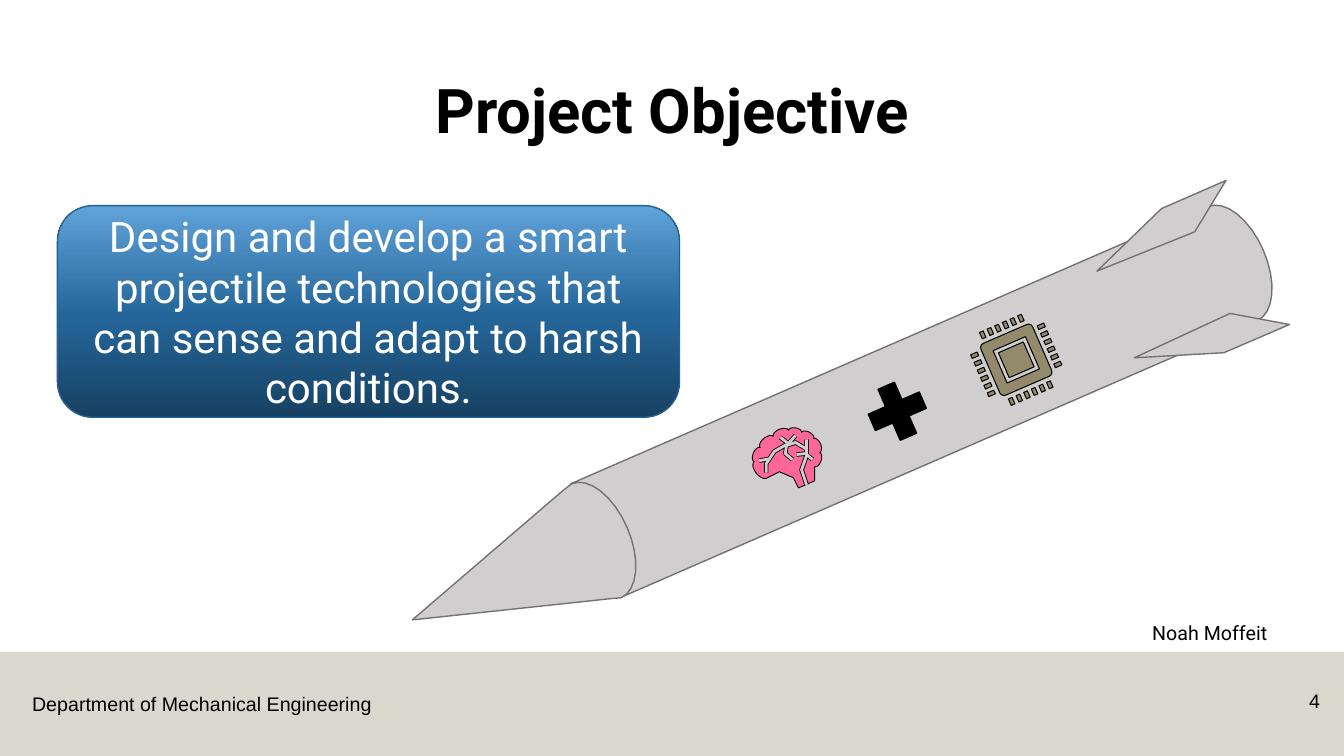
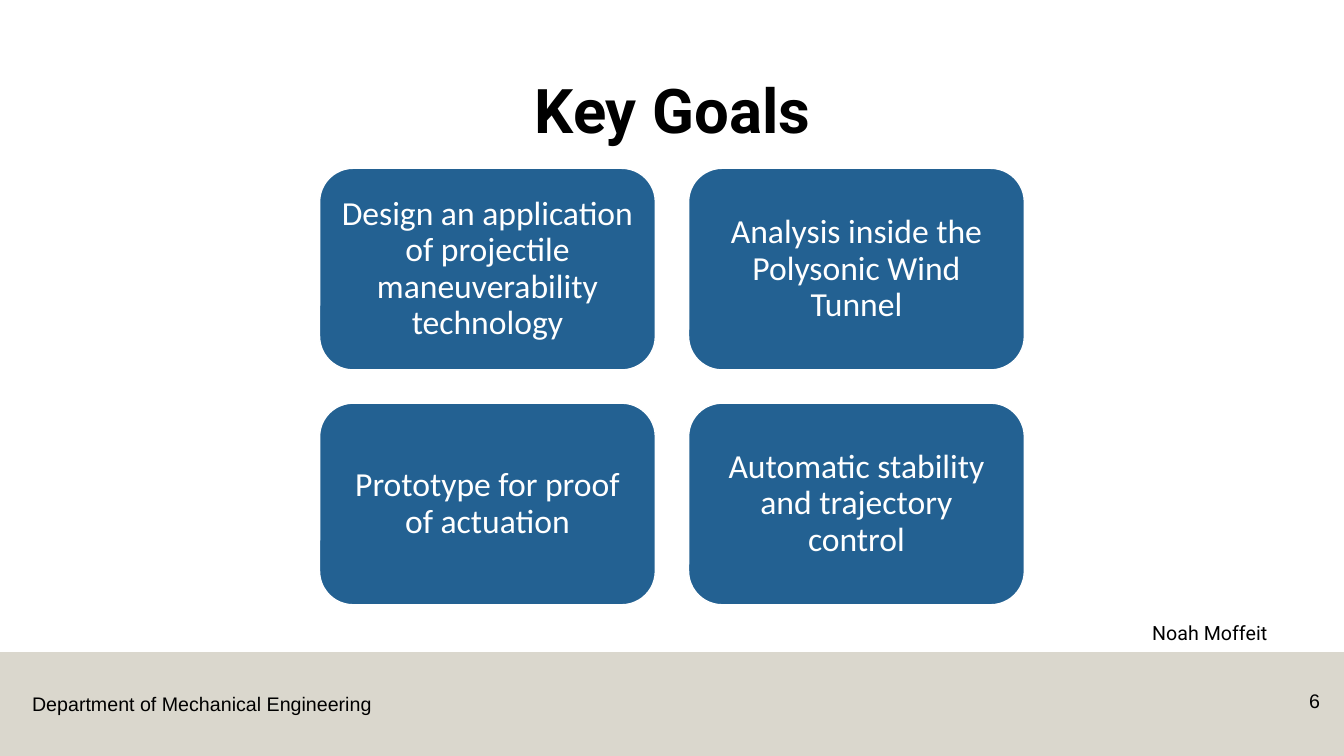
from copy import deepcopy
from math import cos, pi, radians, sin

from lxml import etree
from pptx import Presentation
from pptx.dml.color import RGBColor
from pptx.enum.shapes import MSO_SHAPE as SHAPE
from pptx.enum.text import MSO_ANCHOR as ANCHOR, MSO_AUTO_SIZE as AUTO_SIZE, PP_ALIGN as ALIGN
from pptx.oxml.ns import qn
from pptx.util import Pt

PX = 9144
WIDTH, HEIGHT = 1333, 750
TILT = -23.5
CURVE = 0.27

BLACK = RGBColor.from_string("000000")
WHITE = RGBColor.from_string("FFFFFF")
SAND = RGBColor.from_string("B7B09C")
BLUE = RGBColor.from_string("236192")
DEEP_BLUE = RGBColor.from_string("174162")
MID_BLUE = RGBColor.from_string("25669A")
LIGHT_BLUE = RGBColor.from_string("60A3D9")
HULL = RGBColor.from_string("D0CECE")
HULL_EDGE = RGBColor.from_string("767171")
PINK = RGBColor.from_string("FF6699")
KHAKI = RGBColor.from_string("93896B")

GRADIENT = ((0, DEEP_BLUE), (0.48, MID_BLUE), (1, LIGHT_BLUE))
TITLE_FONT = "Roboto"
FOOTER_FONT = "Arial"
GOAL_FONT = "Calibri"

BODY = [(1198, 205), (1247, 318, CURVE), (615, 593), (566, 480)]
NOSE = [(567, 480), (616, 593, CURVE), (605, 594), (409, 615), (558, 487)]
UPPER_FIN = [(1088, 269), (1152, 207), (1216, 179), (1185, 230)]
LOWER_FIN = [(1125, 355), (1214, 350), (1279, 322), (1220, 311)]
LOBES = [(754, 444), (767, 433), (782, 427), (795, 429), (807, 435), (813, 449), (808, 463)]
STEM = [(808, 477), (792, 484), (787, 474), (773, 468), (761, 474)]
BRAIN = [(748, 458), *[(x, y, CURVE) for x, y in LOBES], *STEM, (748, 458, CURVE)]
GROOVES = (
    [(800, 481), (795, 466), (800, 452), (800, 436)],
    [(799, 445), (789, 439), (780, 442), (779, 450), (786, 456)],
    [(780, 441), (768, 448), (760, 460), (760, 469)],
    [(774, 434), (782, 440), (789, 432)],
    [(753, 457), (764, 455)],
    [(790, 451), (799, 450), (806, 456)],
)

GOALS = (
    "Design an application of projectile maneuverability technology",
    "Analysis inside the Polysonic Wind Tunnel",
    "Prototype for proof of actuation",
    "Automatic stability and trajectory control",
)


def emu(*lengths):
    return [round(n * PX) for n in lengths]


def paint(sp, fill, line=None, width=1):
    sp.shadow.inherit = False
    if fill is None:
        sp.fill.background()
    else:
        sp.fill.solid()
        sp.fill.fore_color.rgb = fill
    if line is None:
        sp.line.fill.background()
    else:
        sp.line.color.rgb = line
        sp.line.width = Pt(width)


def add_preset(slide, kind, box, fill, line=None, width=1, rotation=0):
    sp = slide.shapes.add_shape(kind, *emu(*box))
    paint(sp, fill, line, width)
    sp.rotation = rotation
    return sp


def set_text(sp, text, size, font, color, align=ALIGN.LEFT, spacing=1.0, bold=False):
    tf = sp.text_frame
    tf.word_wrap = True
    tf.auto_size = AUTO_SIZE.NONE
    tf.text = text
    p = tf.paragraphs[0]
    p.alignment = align
    p.line_spacing = spacing
    p.font.size = Pt(size)
    p.font.name = font
    p.font.bold = bold
    p.font.color.rgb = color
    return tf


def add_label(slide, box, text, font, align=ALIGN.LEFT, spacing=1.0):
    sp = slide.shapes.add_textbox(*emu(*box))
    set_text(sp, text, 14, font, BLACK, align, spacing)


def bulge_points(start, end, bulge, steps=16):
    (x0, y0), (x1, y1) = start, end
    dx, dy = x1 - x0, y1 - y0
    for i in range(1, steps + 1):
        angle = pi * i / steps
        along, out = (1 - cos(angle)) / 2, bulge * sin(angle)
        yield x0 + along * dx + out * dy, y0 + along * dy - out * dx


def flatten(outline):
    points = [outline[0]]
    for x, y, *bulge in outline[1:]:
        if bulge:
            points.extend(bulge_points(points[-1], (x, y), *bulge))
        else:
            points.append((x, y))
    return [emu(*point) for point in points]


def add_outline(slide, outline, fill, line, width=1):
    start, *rest = flatten(outline)
    builder = slide.shapes.build_freeform(*start)
    builder.add_line_segments(rest, close=fill is not None)
    paint(builder.convert_to_shape(), fill, line, width)


def add_slide(prs, title, number):
    slide = prs.slides.add_slide(prs.slide_layouts[5])
    band = add_preset(slide, SHAPE.RECTANGLE, (0, 647, WIDTH, 103), SAND)
    color = band._element.spPr.find(qn("a:solidFill"))[0]
    etree.SubElement(color, qn("a:alpha"), val="50000")
    sp = slide.shapes.title
    sp.left, sp.top, sp.width, sp.height = emu(92, 40, 1150, 145)
    tf = set_text(sp, title, 44, TITLE_FONT, BLACK, ALIGN.CENTER, 0.9, True)
    tf.vertical_anchor = ANCHOR.MIDDLE
    add_label(slide, (22, 682, 380, 34), "Department of Mechanical Engineering", FOOTER_FONT)
    add_label(slide, (1242, 679, 77, 40), str(number), FOOTER_FONT, ALIGN.RIGHT)
    add_label(slide, (1133, 614, 200, 34), "Noah Moffeit", TITLE_FONT, spacing=0.9)
    return slide


def add_objective(slide, text):
    sp = add_preset(slide, SHAPE.ROUNDED_RECTANGLE, (57, 204, 617, 210), BLUE, BLUE)
    sp.fill.gradient()
    sp.fill.gradient_angle = 90
    stops = sp._element.spPr.find(".//" + qn("a:gsLst"))
    stops.insert(1, deepcopy(stops[0]))
    for stop, (position, color) in zip(sp.fill.gradient_stops, GRADIENT):
        stop.position = position
        stop.color.rgb = color
    tf = set_text(sp, text, 30, TITLE_FONT, WHITE, ALIGN.CENTER)
    tf.vertical_anchor = ANCHOR.MIDDLE


def add_tilted(slide, kind, cx, cy, w, h, fill, line=BLACK, width=0.75):
    box = (cx - w / 2, cy - h / 2, w, h)
    return add_preset(slide, kind, box, fill, line, width, TILT)


def add_chip(slide, cx, cy):
    turn = radians(TILT)
    reach, pitch, pins = 36, 8.25, 6
    for side in (-reach, reach):
        for i in range(pins):
            along = (i - (pins - 1) / 2) * pitch
            for dx, dy, w, h in ((side, along, 7, 4), (along, side, 4, 7)):
                x = cx + dx * cos(turn) - dy * sin(turn)
                y = cy + dx * sin(turn) + dy * cos(turn)
                add_tilted(slide, SHAPE.RECTANGLE, x, y, w, h, KHAKI)
    case = add_tilted(slide, SHAPE.ROUNDED_RECTANGLE, cx, cy, 56, 56, KHAKI)
    case.adjustments[0] = 0.08
    for size, fill in ((35, HULL), (27, KHAKI)):
        add_tilted(slide, SHAPE.RECTANGLE, cx, cy, size, size, fill)


def add_brain(slide):
    add_outline(slide, BRAIN, PINK, BLACK, 0.63)
    for color, width in ((BLACK, 3.2), (HULL, 2)):
        for groove in GROOVES:
            add_outline(slide, groove, None, color, width)


def add_projectile(slide):
    for outline in (BODY, NOSE, UPPER_FIN, LOWER_FIN):
        add_outline(slide, outline, HULL, HULL_EDGE)
    add_brain(slide)
    add_chip(slide, 1008, 357)
    add_tilted(slide, SHAPE.MATH_PLUS, 890, 408, 75, 75, BLACK, width=1)


def add_goals(slide, goals):
    for i, goal in enumerate(goals):
        row, col = divmod(i, 2)
        box = (317 + 366 * col, 167 + 233 * row, 333, 200)
        sp = add_preset(slide, SHAPE.ROUNDED_RECTANGLE, box, BLUE, WHITE)
        tf = set_text(sp, goal, 24, GOAL_FONT, WHITE, ALIGN.CENTER, 0.9)
        tf.vertical_anchor = ANCHOR.MIDDLE
        tf.margin_left, tf.margin_top, tf.margin_right, tf.margin_bottom = emu(10, 10, 10, 10)


def main():
    prs = Presentation()
    prs.slide_width, prs.slide_height = emu(WIDTH, HEIGHT)
    slide = add_slide(prs, "Project Objective", 4)
    add_objective(slide, "Design and develop a smart projectile technologies "
                         "that can sense and adapt to harsh conditions.")
    add_projectile(slide)
    add_goals(add_slide(prs, "Key Goals", 6), GOALS)
    prs.save("out.pptx")


if __name__ == "__main__":
    main()
